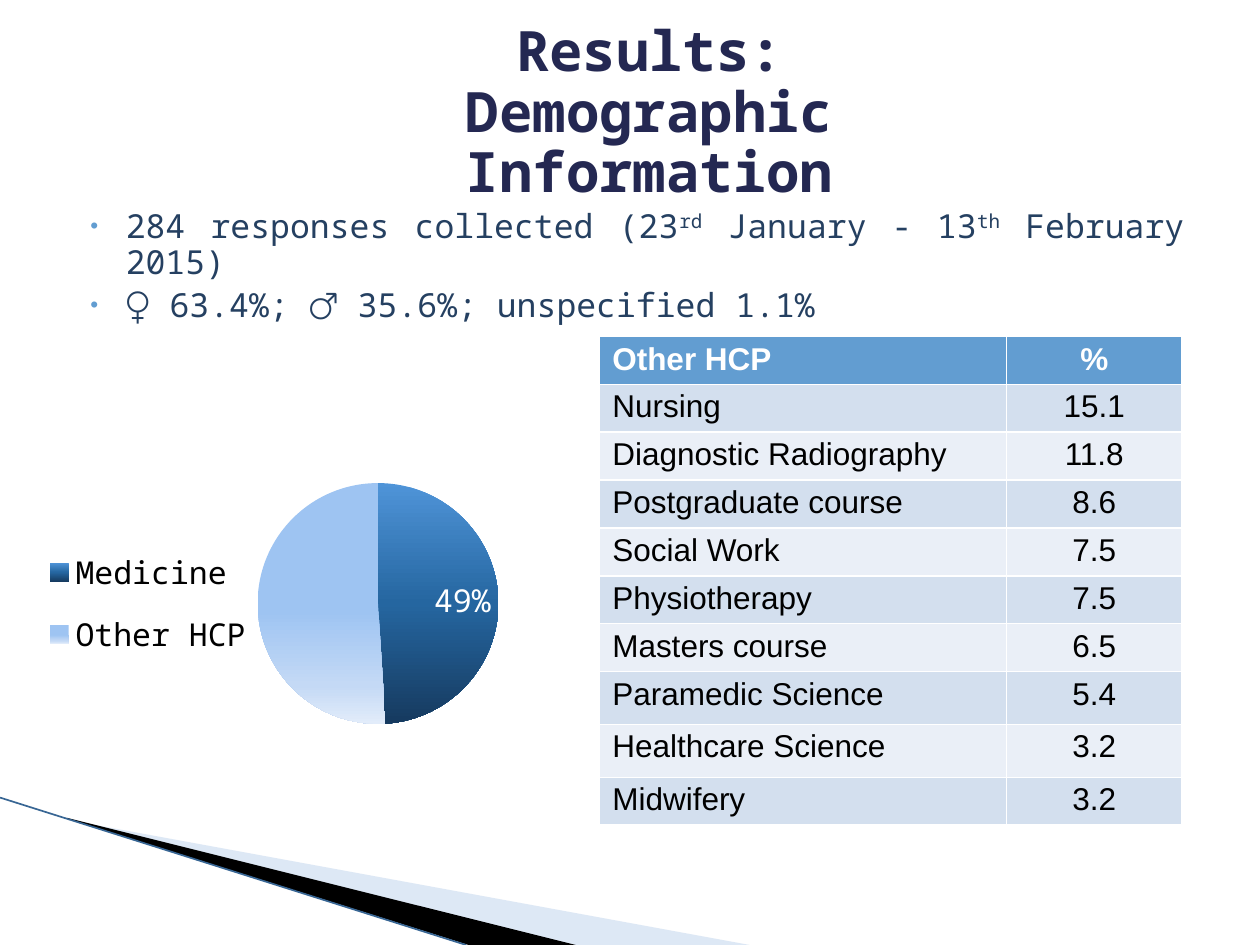
from lxml import etree
from pptx import Presentation
from pptx.chart.data import CategoryChartData
from pptx.dml.color import RGBColor
from pptx.enum.chart import XL_CHART_TYPE, XL_LABEL_POSITION, XL_LEGEND_POSITION
from pptx.enum.text import MSO_ANCHOR, PP_ALIGN
from pptx.oxml import parse_xml
from pptx.oxml.ns import nsdecls, qn
from pptx.util import Inches, Pt

PIE = XL_CHART_TYPE.PIE
INSIDE_END = XL_LABEL_POSITION.INSIDE_END
LEGEND_LEFT = XL_LEGEND_POSITION.LEFT
MIDDLE = MSO_ANCHOR.MIDDLE
LEFT, CENTER, JUSTIFY = PP_ALIGN.LEFT, PP_ALIGN.CENTER, PP_ALIGN.JUSTIFY

MONO, SANS = "Noto Sans Mono", "Arial"
COLORS = {
    "title": "242852", "body": "254061", "accent": "629DD1",
    "black": "000000", "white": "FFFFFF",
    "band_dark": "D3DFEE", "band_light": "EAEFF7",
    "wedge": "ABC6E6", "edge": "386694",
}

presentation = Presentation()
presentation.slide_width, presentation.slide_height = Inches(10), Inches(7.5)
slide = presentation.slides.add_slide(presentation.slide_layouts[6])
UNIT = presentation.slide_width // 100  # the grid has 100 columns and 75 rows


def grid(*units):
    """Turn grid columns and rows into slide lengths."""
    return [round(unit * UNIT) for unit in units]


def write(paragraph, text, font=MONO, size=18, color="black", bold=False, align=LEFT,
          line_spacing=None):
    """Fill a paragraph; every second part between ^ marks is superscript."""
    paragraph.alignment = align
    paragraph.line_spacing = line_spacing
    for index, part in enumerate(text.split("^")):
        run = paragraph.add_run()
        run.text = part
        run.font.name, run.font.size, run.font.bold = font, Pt(size), bold
        run.font.color.rgb = RGBColor.from_string(COLORS[color])
        if index % 2:
            run.font._element.set("baseline", "30000")


# Corner wedges
wedges = [
    ("wedge", 40, [(5.5, 65.1), (59.5, 75), (45.6, 75), (5.5, 65)]),
    ("black", 100, [(5.3, 64.9), (45.7, 75), (37.2, 75), (5.4, 65)]),
]
for color, opacity, points in wedges:
    corners = [grid(*point) for point in points]
    builder = slide.shapes.build_freeform(*corners[0], scale=1.0)
    builder.add_line_segments(corners[1:], close=True)
    wedge = builder.convert_to_shape()
    wedge.shadow.inherit = False
    wedge.line.fill.background()
    wedge.fill.solid()
    wedge.fill.fore_color.rgb = RGBColor.from_string(COLORS[color])
    color_element = wedge._element.spPr.find(".//" + qn("a:srgbClr"))
    etree.SubElement(color_element, qn("a:alpha"), val=str(opacity * 1000))

edge = slide.shapes.add_connector(1, *grid(0, 63.3, 37, 75))
edge.line.color.rgb = RGBColor.from_string(COLORS["edge"])
edge.line.width = Pt(0.95)
etree.SubElement(edge._element.spPr, qn("a:effectLst"))

# Bullets
body = slide.shapes.add_textbox(*grid(5, 16.2, 90, 8.4)).text_frame
body.word_wrap = True
bullets = [
    "284 responses collected (23^rd^ January - 13^th^ February 2015)",
    "♀ 63.4%; ♂ 35.6%; unspecified 1.1%",
]
for index, text in enumerate(bullets):
    paragraph = body.add_paragraph() if index else body.paragraphs[0]
    properties = paragraph._p.get_or_add_pPr()
    properties.set("marL", str(Inches(0.4)))
    properties.set("indent", str(Inches(-0.28)))
    bullet_color = etree.SubElement(properties, qn("a:buClr"))
    etree.SubElement(bullet_color, qn("a:srgbClr"), val=COLORS["accent"])
    etree.SubElement(properties, qn("a:buSzPct"), val="68000")
    etree.SubElement(properties, qn("a:buFont"), typeface=SANS)
    etree.SubElement(properties, qn("a:buChar"), char="•")
    write(paragraph, text, size=18.9, color="body", align=JUSTIFY, line_spacing=0.9)
    if index:
        paragraph.space_before = Pt(4)

# Pie of professions
data = CategoryChartData()
data.categories = ["Medicine", "Other HCP"]
data.add_series("Series 1", [49, 51])
chart = slide.shapes.add_chart(PIE, *grid(2.6, 30.2, 43.5, 35.4), data).chart
chart.has_title = False
chart.font.name, chart.font.size = MONO, Pt(18)
chart.font.color.rgb = RGBColor.from_string(COLORS["black"])
chart.has_legend = True
chart.legend.position = LEGEND_LEFT
chart.legend.include_in_layout = False
pie = chart.plots[0]
pie.vary_by_categories = True
pie.has_data_labels = True
pie.data_labels.show_percentage, pie.data_labels.show_value = True, False
pie.data_labels.number_format, pie.data_labels.number_format_is_linked = "0%", False
pie.data_labels.position = INSIDE_END

slice_stops = [
    [(0, "4F94D8"), (50, "2566A0"), (100, "163A5F")],
    [(0, "9EC4F2"), (53, "9EC4F2"), (84, "C4D9F5"), (100, "E2ECFA")],
]
for index, stops in enumerate(slice_stops):
    fill = pie.series[0].points[index].format.fill
    fill.gradient()
    fill.gradient_angle = 270
    stop_list = pie.series[0]._element.findall(".//" + qn("a:gsLst"))[index]
    for old_stop in list(stop_list):
        stop_list.remove(old_stop)
    for position, color in stops:
        stop = etree.SubElement(stop_list, qn("a:gs"), pos=str(position * 1000))
        etree.SubElement(stop, qn("a:srgbClr"), val=color)

medicine_label = pie.series[0].points[0].data_label
write(medicine_label.text_frame.paragraphs[0], "49%", color="white")
medicine_label.position = INSIDE_END

# Shares of the chart area: left, top, width, height
layouts = [
    (chart._chartSpace.chart.plotArea, "inner", (0.41, 0.23, 0.44, 0.54)),
    (chart.legend._element, None, (0.03, 0.34, 0.36, 0.32)),
]
for parent, target, shares in layouts:
    for old_layout in parent.findall(qn("c:layout")):
        parent.remove(old_layout)
    layout = parse_xml(f"<c:layout {nsdecls('c')}><c:manualLayout/></c:layout>")
    if target:
        etree.SubElement(layout[0], qn("c:layoutTarget"), val=target)
    for mode in ("xMode", "yMode"):
        etree.SubElement(layout[0], qn("c:" + mode), val="edge")
    for name, share in zip("xywh", shares):
        etree.SubElement(layout[0], qn("c:" + name), val=str(share))
    parent.insert(0 if target else 1, layout)

# Table of other professions
rows = [
    ("Other HCP", "%"), ("Nursing", "15.1"), ("Diagnostic Radiography", "11.8"),
    ("Postgraduate course", "8.6"), ("Social Work", "7.5"), ("Physiotherapy", "7.5"),
    ("Masters course", "6.5"), ("Paramedic Science", "5.4"),
    ("Healthcare Science", "3.2"), ("Midwifery", "3.2"),
]
TALL_ROWS = (7, 8)
table = slide.shapes.add_table(len(rows), 2, *grid(47.6, 26.7, 46.2, 38.8)).table
for column, width in zip(table.columns, grid(32.3, 13.9)):
    column.width = width
for row_index, row in enumerate(rows):
    header = row_index == 0
    band = "accent" if header else "band_dark" if row_index % 2 else "band_light"
    table.rows[row_index].height = grid(4.2 if row_index in TALL_ROWS else 3.8)[0]
    for column_index, text in enumerate(row):
        cell = table.cell(row_index, column_index)
        cell.margin_top = cell.margin_bottom = Inches(0.04)
        cell.fill.solid()
        cell.fill.fore_color.rgb = RGBColor.from_string(COLORS[band])
        write(cell.text_frame.paragraphs[0], text, font=SANS, bold=header,
              color="white" if header else "black",
              align=CENTER if column_index else LEFT)

# Title
title = slide.shapes.add_textbox(*grid(25.1, 2.8, 52.9, 12.5)).text_frame
title.word_wrap = True
title.vertical_anchor = MIDDLE
write(title.paragraphs[0], "Results: Demographic Information", size=31.8,
      color="title", bold=True, align=CENTER, line_spacing=0.9)

presentation.save("out.pptx")
